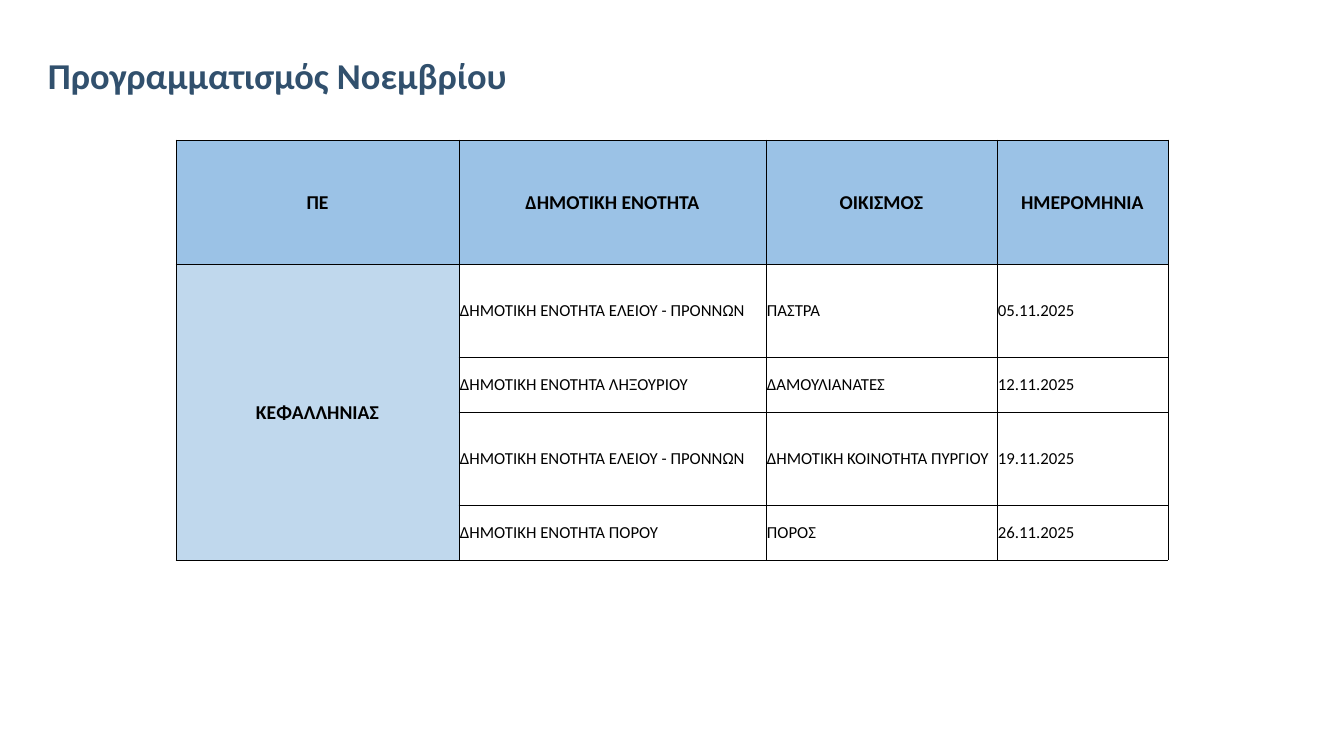
from lxml.etree import SubElement
from pptx import Presentation
from pptx.dml.color import RGBColor
from pptx.enum.text import MSO_ANCHOR, PP_ALIGN
from pptx.oxml.ns import qn
from pptx.util import Pt

PX = 914400 / 100.8
HEAD = ["ΠΕ", "ΔΗΜΟΤΙΚΗ ΕΝΟΤΗΤΑ", "ΟΙΚΙΣΜΟΣ", "ΗΜΕΡΟΜΗΝΙΑ"]
REGION = "ΚΕΦΑΛΛΗΝΙΑΣ"
VISITS = [
    ["ΔΗΜΟΤΙΚΗ ΕΝΟΤΗΤΑ ΕΛΕΙΟΥ - ΠΡΟΝΝΩΝ", "ΠΑΣΤΡΑ", "05.11.2025"],
    ["ΔΗΜΟΤΙΚΗ ΕΝΟΤΗΤΑ ΛΗΞΟΥΡΙΟΥ", "ΔΑΜΟΥΛΙΑΝΑΤΕΣ", "12.11.2025"],
    ["ΔΗΜΟΤΙΚΗ ΕΝΟΤΗΤΑ ΕΛΕΙΟΥ - ΠΡΟΝΝΩΝ", "ΔΗΜΟΤΙΚΗ ΚΟΙΝΟΤΗΤΑ ΠΥΡΓΙΟΥ", "19.11.2025"],
    ["ΔΗΜΟΤΙΚΗ ΕΝΟΤΗΤΑ ΠΟΡΟΥ", "ΠΟΡΟΣ", "26.11.2025"],
]
COLS = [283, 307, 231, 171]
ROWS = [124, 93, 55, 93, 55]


def px(n):
    return round(n * PX)


def color(code):
    return RGBColor.from_string(code)


def write(frame, text, size=12, bold=False, ink="000000", align=PP_ALIGN.LEFT, space=1.0):
    para = frame.paragraphs[0]
    para.alignment = align
    para.line_spacing = space
    run = para.add_run()
    run.text = text
    run.font.name = "Calibri"
    run.font.size = Pt(size)
    run.font.bold = bold
    run.font.color.rgb = color(ink)


def inset(area, left, top, right, bottom):
    area.margin_left, area.margin_top = px(left), px(top)
    area.margin_right, area.margin_bottom = px(right), px(bottom)


def border(cell):
    props = cell._tc.get_or_add_tcPr()
    for n, side in enumerate(("a:lnL", "a:lnR", "a:lnT", "a:lnB")):
        line = SubElement(props, qn(side), w=str(Pt(0.5)))
        fill = SubElement(line, qn("a:solidFill"))
        SubElement(fill, qn("a:srgbClr"), val="000000")
        props.insert(n, line)  # borders come before the fill


def heading(slide, x, y, w, h):
    frame = slide.shapes.add_textbox(px(x), px(y), px(w), px(h)).text_frame
    frame.word_wrap = True
    frame.vertical_anchor = MSO_ANCHOR.BOTTOM
    inset(frame, 12, 5, 10, 5)
    write(frame, "Προγραμματισμός Νοεμβρίου", size=26, bold=True, ink="31506D", space=0.9)


def schedule(slide, x, y, w, h):
    table = slide.shapes.add_table(len(ROWS), len(COLS), px(x), px(y), px(w), px(h)).table
    table.first_row = table.horz_banding = False
    for col, width in zip(table.columns, COLS):
        col.width = px(width)
    for row, height in zip(table.rows, ROWS):
        row.height = px(height)

    # Region cell spans all visits
    table.cell(1, 0).merge(table.cell(len(VISITS), 0))
    grid = [HEAD] + [[REGION if n == 0 else ""] + visit for n, visit in enumerate(VISITS)]

    for r, texts in enumerate(grid):
        for c, text in enumerate(texts):
            cell = table.cell(r, c)
            cell.vertical_anchor = MSO_ANCHOR.MIDDLE
            inset(cell, 1, 1, 1, 0)
            label = r == 0 or c == 0
            if label:
                cell.fill.solid()
                cell.fill.fore_color.rgb = color("9BC2E6" if r == 0 else "C0D8ED")
            else:
                cell.fill.background()
            border(cell)
            if text:
                write(cell.text_frame, text, size=14 if label else 12, bold=label,
                      align=PP_ALIGN.CENTER if label else PP_ALIGN.LEFT)


def main():
    deck = Presentation()
    deck.slide_width, deck.slide_height = px(1344), px(756)
    slide = deck.slides.add_slide(deck.slide_layouts[6])
    heading(slide, 36, 25, 1250, 77)
    schedule(slide, 176, 140, sum(COLS), sum(ROWS))
    deck.save("out.pptx")


if __name__ == "__main__":
    main()
